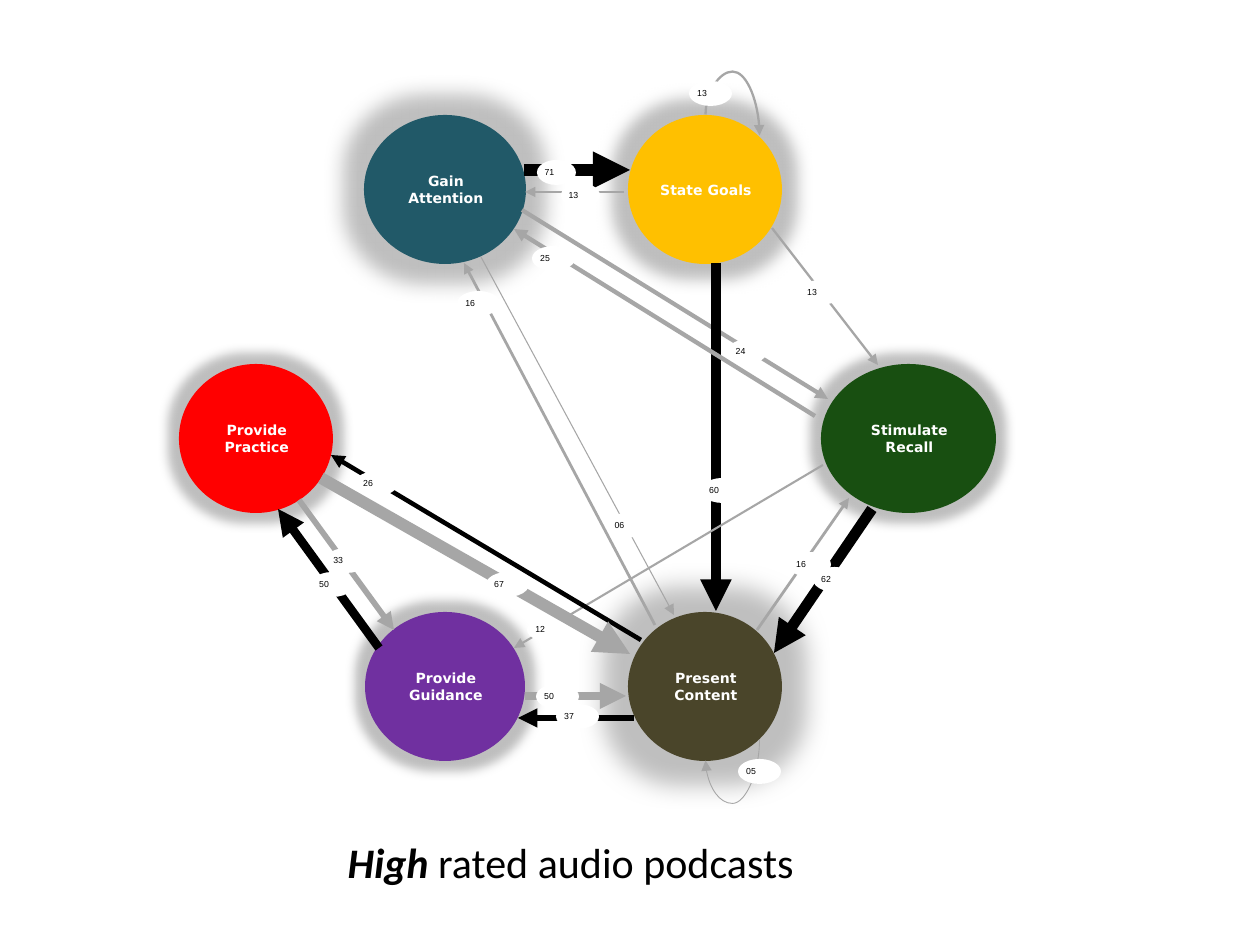
"""Build a slide of instructional events and the transitions between them."""
from dataclasses import dataclass

from lxml.etree import SubElement
from pptx import Presentation
from pptx.dml.color import RGBColor
from pptx.enum.shapes import MSO_CONNECTOR, MSO_SHAPE
from pptx.enum.text import MSO_ANCHOR, MSO_AUTO_SIZE, PP_ALIGN
from pptx.oxml.ns import qn
from pptx.util import Emu, Pt


@dataclass(frozen=True)
class Theme:
    black: str = "000000"
    white: str = "FFFFFF"
    grey: str = "A6A6A6"
    glow: str = "BFBFBF"
    event_font: str = "DejaVu Sans"
    label_font: str = "Arial"
    caption_font: str = "Calibri"
    event_size: int = 8
    label_size: int = 5
    caption_size: int = 24


THEME = Theme()
PX = 914400 / 126
EVENT_HEIGHT = 149
LABEL_HEIGHT = 25
NARROW, WIDE = 39, 43

# name, left, top, width, glow radius, fill
EVENTS = [
    ("Gain Attention", 364, 115, 162, 40, "215968"),
    ("State Goals", 628, 115, 154, 31, "FFC000"),
    ("Stimulate Recall", 821, 364, 175, 21, "184F11"),
    ("Present Content", 628, 612, 154, 50, "4A452A"),
    ("Provide Guidance", 365, 612, 160, 21, "7030A0"),
    ("Provide Practice", 179, 364, 154, 21, "FF0000"),
]

# label, label left and top, label width, start, end, colour, points, loop
TRANSITIONS = [
    ("71", (537, 160), NARROW, (524, 170), (630, 170), THEME.black, 7.1, None),
    ("24", (728, 339), NARROW, (522, 210), (828, 399), THEME.grey, 2.4, None),
    ("06", (607, 513), NARROW, (481, 257), (674, 615), THEME.grey, 0.6, None),
    ("13", (561, 183), NARROW, (624, 192), (525, 192), THEME.grey, 1.3, None),
    ("13", (689, 81), WIDE, (743, 98), (722, 152), THEME.grey, 1.3, (270, -204900)),
    ("13", (799, 280), WIDE, (772, 228), (878, 365), THEME.grey, 1.3, None),
    ("60", (701, 478), WIDE, (716, 263), (716, 611), THEME.black, 6, None),
    ("25", (532, 246), WIDE, (815, 416), (514, 229), THEME.grey, 2.5, None),
    ("62", (813, 567), WIDE, (872, 509), (774, 653), THEME.black, 6.2, None),
    ("12", (527, 617), WIDE, (823, 465), (514, 648), THEME.grey, 1.2, None),
    ("16", (457, 291), WIDE, (655, 625), (464, 263), THEME.grey, 1.6, None),
    ("16", (788, 552), WIDE, (757, 630), (849, 498), THEME.grey, 1.6, None),
    ("05", (738, 759), WIDE, (722, 723), (743, 777), THEME.grey, 0.5, (90, 304900)),
    ("37", (556, 704), WIDE, (634, 718), (518, 718), THEME.black, 3.7, None),
    ("26", (355, 471), WIDE, (641, 640), (331, 455), THEME.black, 2.6, None),
    ("50", (536, 684), WIDE, (525, 696), (626, 696), THEME.grey, 5, None),
    ("50", (311, 572), WIDE, (379, 648), (278, 509), THEME.black, 5, None),
    ("67", (486, 572), WIDE, (321, 478), (630, 654), THEME.grey, 6.7, None),
    ("33", (325, 548), WIDE, (299, 500), (394, 630), THEME.grey, 3.3, None),
]

CAPTION_BOX = (335, 830, 598, 63)
CAPTION = [("High ", True), ("rated audio podcasts", False)]


def px(*lengths):
    return [Emu(round(length * PX)) for length in lengths]


def add_span(para, text, font, size, color, bold=False, italic=False):
    span = para.add_run()
    span.text = text
    span.font.name = font
    span.font.size = Pt(size)
    span.font.color.rgb = RGBColor.from_string(color)
    span.font.bold = bold
    span.font.italic = italic


def add_ellipse(page, bounds, fill, align):
    ellipse = page.shapes.add_shape(MSO_SHAPE.OVAL, *px(*bounds))
    ellipse.fill.solid()
    ellipse.fill.fore_color.rgb = RGBColor.from_string(fill)
    ellipse.line.fill.background()
    ellipse.shadow.inherit = False
    frame = ellipse.text_frame
    frame.word_wrap = True
    frame.vertical_anchor = MSO_ANCHOR.MIDDLE
    frame.margin_left = px(2)[0]
    frame.margin_top = frame.margin_right = frame.margin_bottom = 0
    frame.paragraphs[0].alignment = align
    return ellipse


def add_event(page, name, left, top, width, radius, fill):
    event = add_ellipse(page, (left, top, width, EVENT_HEIGHT), fill, PP_ALIGN.CENTER)
    effects = event._element.spPr.find(qn("a:effectLst"))
    glow = SubElement(effects, qn("a:glow"), rad=str(px(radius)[0]))
    SubElement(glow, qn("a:srgbClr"), val=THEME.glow)
    add_span(event.text_frame.paragraphs[0], name, THEME.event_font,
             THEME.event_size, THEME.white, bold=True)


def add_arrow(page, start, end, color, points, loop):
    kind = MSO_CONNECTOR.CURVE if loop else MSO_CONNECTOR.STRAIGHT
    arrow = page.shapes.add_connector(kind, *px(*start, *end))
    arrow.line.color.rgb = RGBColor.from_string(color)
    arrow.line.width = Pt(points)
    properties = arrow._element.spPr
    SubElement(properties.find(qn("a:ln")), qn("a:tailEnd"), type="triangle")
    SubElement(properties, qn("a:effectLst"))
    if loop:
        degrees, bend = loop
        properties.find(qn("a:xfrm")).set("rot", str(degrees * 60000))
        adjustments = properties.find(qn("a:prstGeom")).find(qn("a:avLst"))
        SubElement(adjustments, qn("a:gd"), name="adj1", fmla=f"val {bend}")


def add_transition(page, label, corner, width, *arrow):
    add_arrow(page, *arrow)
    box = add_ellipse(page, (*corner, width, LABEL_HEIGHT), THEME.white, PP_ALIGN.LEFT)
    add_span(box.text_frame.paragraphs[0], label, THEME.label_font,
             THEME.label_size, THEME.black)


def set_caption(page):
    title = page.shapes.title
    title.left, title.top, title.width, title.height = px(*CAPTION_BOX)
    frame = title.text_frame
    frame.auto_size = MSO_AUTO_SIZE.NONE
    frame.word_wrap = True
    frame.vertical_anchor = MSO_ANCHOR.MIDDLE
    para = frame.paragraphs[0]
    para.alignment = PP_ALIGN.LEFT
    for text, strong in CAPTION:
        add_span(para, text, THEME.caption_font, THEME.caption_size,
                 THEME.black, bold=strong, italic=strong)


def main():
    deck = Presentation()
    deck.slide_width, deck.slide_height = px(1260, 945)
    page = deck.slides.add_slide(deck.slide_layouts[5])
    set_caption(page)
    for event in EVENTS:
        add_event(page, *event)
    for transition in TRANSITIONS:
        add_transition(page, *transition)
    deck.save("out.pptx")


if __name__ == "__main__":
    main()
